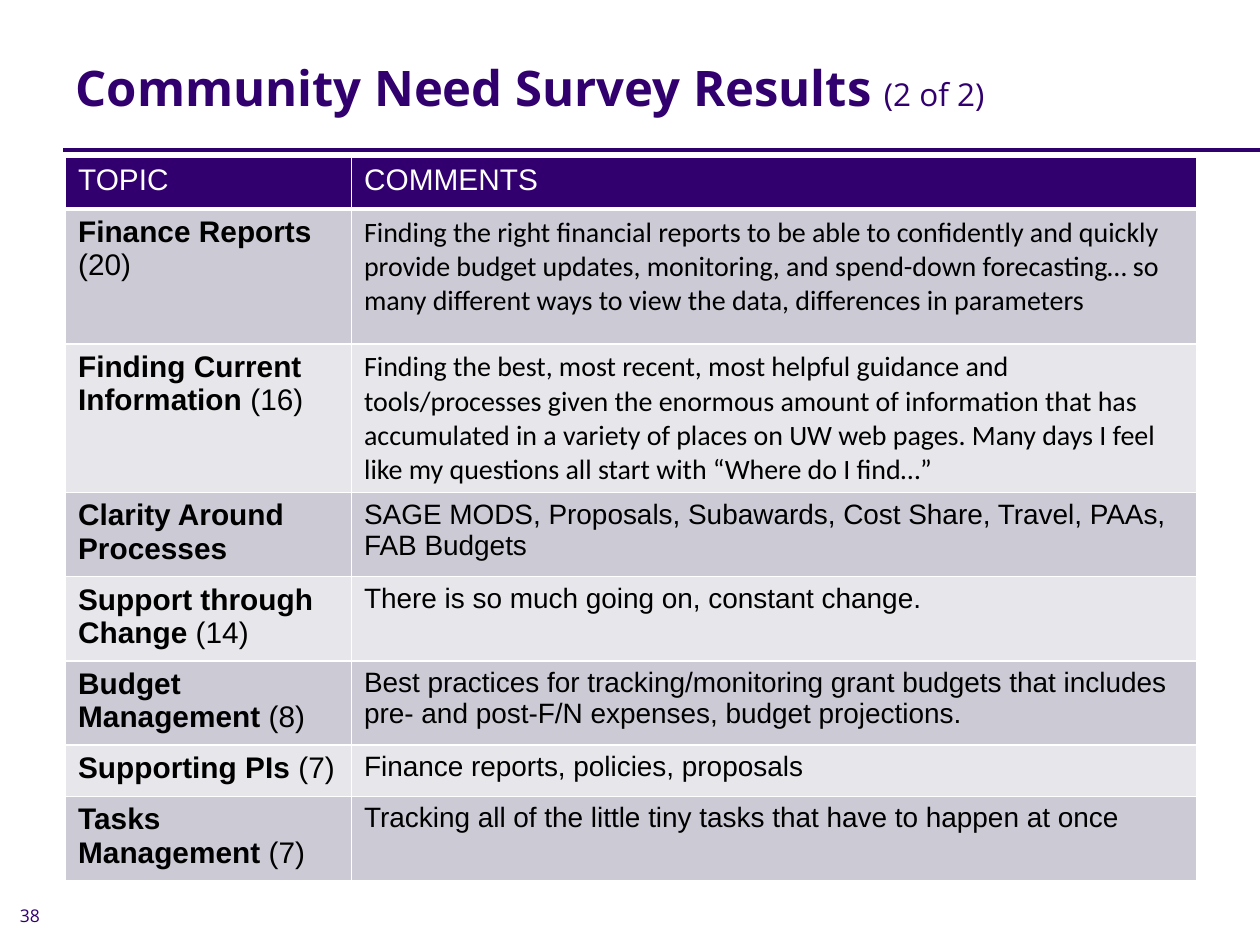
from lxml import etree
from pptx import Presentation
from pptx.dml.color import RGBColor
from pptx.enum.shapes import MSO_CONNECTOR
from pptx.enum.text import MSO_ANCHOR, MSO_AUTO_SIZE, PP_ALIGN
from pptx.oxml.ns import qn
from pptx.util import Inches, Pt

STRAIGHT = MSO_CONNECTOR.STRAIGHT
MIDDLE = MSO_ANCHOR.MIDDLE
LEFT = PP_ALIGN.LEFT
NO_FIT = MSO_AUTO_SIZE.NONE

COLORS = {
    "purple": "32006E", "rule": "2F006D", "white": "FFFFFF",
    "black": "000000", "band_dark": "CCCAD4", "band_light": "E7E6EA",
}
TITLE = ("Community Need Survey Results ", "(2 of 2)")
PAGE_NUMBER = "38"
HEADINGS = ("TOPIC", "COMMENTS")
# topic, number of mentions, comment, comment font
RESULTS = [
    ("Finance Reports ", "(20)",
     "Finding the right financial reports to be able to confidently and quickly "
     "provide budget updates, monitoring, and spend-down forecasting… so many "
     "different ways to view the data, differences in parameters", "Calibri"),
    ("Finding Current Information ", "(16)",
     "Finding the best, most recent, most helpful guidance and tools/processes "
     "given the enormous amount of information that has accumulated in a variety "
     "of places on UW web pages. Many days I feel like my questions all start "
     "with “Where do I find…”", "Calibri"),
    ("Clarity Around Processes", "",
     "SAGE MODS, Proposals, Subawards, Cost Share, Travel, PAAs, FAB Budgets",
     "Arial"),
    ("Support through Change ", "(14)",
     "There is so much going on, constant change.", "Arial"),
    ("Budget Management ", "(8)",
     "Best practices for tracking/monitoring grant budgets that includes pre- "
     "and post-F/N expenses, budget projections.", "Arial"),
    ("Supporting PIs ", "(7)", "Finance reports, policies, proposals", "Arial"),
    ("Tasks Management ", "(7)",
     "Tracking all of the little tiny tasks that have to happen at once", "Arial"),
]
COLUMN_WIDTHS = (2.27, 6.71)
ROW_HEIGHTS = (0.41, 1.07, 1.18, 0.63, 0.63, 0.63, 0.41, 0.63)
TABLE_LEFT, TABLE_TOP = 0.52, 1.25
RULE_Y = 1.19


def rgb(name):
    return RGBColor.from_string(COLORS[name])


def add_text(frame, text, *, size, font="Arial", color="black", bold=False):
    """Append a formatted run to the frame's first paragraph."""
    paragraph = frame.paragraphs[0]
    paragraph.alignment = LEFT
    run = paragraph.add_run()
    run.text = text
    run.font.name, run.font.size, run.font.bold = font, Pt(size), bold
    run.font.color.rgb = rgb(color)


def style_cell(cell, fill, top=1, bottom=1):
    """Draw white borders, their widths in points, and fill the cell."""
    properties = cell._tc.get_or_add_tcPr()
    for side, width in (("L", 1), ("R", 1), ("T", top), ("B", bottom)):
        border = etree.SubElement(properties, qn(f"a:ln{side}"), w=str(Pt(width)))
        solid = etree.SubElement(border, qn("a:solidFill"))
        etree.SubElement(solid, qn("a:srgbClr"), val=COLORS["white"])
    cell.fill.solid()
    cell.fill.fore_color.rgb = rgb(fill)


def add_results_table(slide):
    table = slide.shapes.add_table(
        len(ROW_HEIGHTS), len(COLUMN_WIDTHS), Inches(TABLE_LEFT), Inches(TABLE_TOP),
        Inches(sum(COLUMN_WIDTHS)), Inches(sum(ROW_HEIGHTS))).table
    for column, width in zip(table.columns, COLUMN_WIDTHS):
        column.width = Inches(width)
    for row, height in zip(table.rows, ROW_HEIGHTS):
        row.height = Inches(height)

    for column, heading in enumerate(HEADINGS):
        cell = table.cell(0, column)
        style_cell(cell, "purple", bottom=3)
        add_text(cell.text_frame, heading, size=17, color="white")

    for row, (topic, mentions, comment, font) in enumerate(RESULTS, start=1):
        topic_cell, comment_cell = table.cell(row, 0), table.cell(row, 1)
        for cell in (topic_cell, comment_cell):
            style_cell(cell, "band_dark" if row % 2 else "band_light",
                       top=3 if row == 1 else 1)
        add_text(topic_cell.text_frame, topic, size=17, bold=True)
        if mentions:
            add_text(topic_cell.text_frame, mentions, size=17)
        add_text(comment_cell.text_frame, comment, size=16, font=font)
    table.cell(1, 1).margin_bottom = Inches(0.2)


def main():
    deck = Presentation()
    deck.slide_width, deck.slide_height = Inches(10), Inches(7.5)
    slide = deck.slides.add_slide(deck.slide_layouts[5])

    rule = slide.shapes.add_connector(
        STRAIGHT, Inches(0.5), Inches(RULE_Y), deck.slide_width, Inches(RULE_Y))
    rule.line.color.rgb = rgb("rule")
    rule.line.width = Pt(2.25)
    etree.SubElement(rule._element.spPr, qn("a:effectLst"))

    number = slide.shapes.add_textbox(
        Inches(0.06), Inches(7.13), Inches(0.44), Inches(0.27)).text_frame
    number.word_wrap = True
    number.vertical_anchor = MIDDLE
    add_text(number, PAGE_NUMBER, size=10, font="Open Sans", color="purple")

    title = slide.shapes.title
    title.left, title.top = Inches(0.5), Inches(0.3)
    title.width, title.height = Inches(9), Inches(0.78)
    title.text_frame.vertical_anchor = MIDDLE
    title.text_frame.auto_size = NO_FIT
    for text, size, bold in zip(TITLE, (28, 18), (True, False)):
        add_text(title.text_frame, text, size=size, font="Open Sans",
                 color="purple", bold=bold)

    add_results_table(slide)
    deck.save("out.pptx")


if __name__ == "__main__":
    main()
